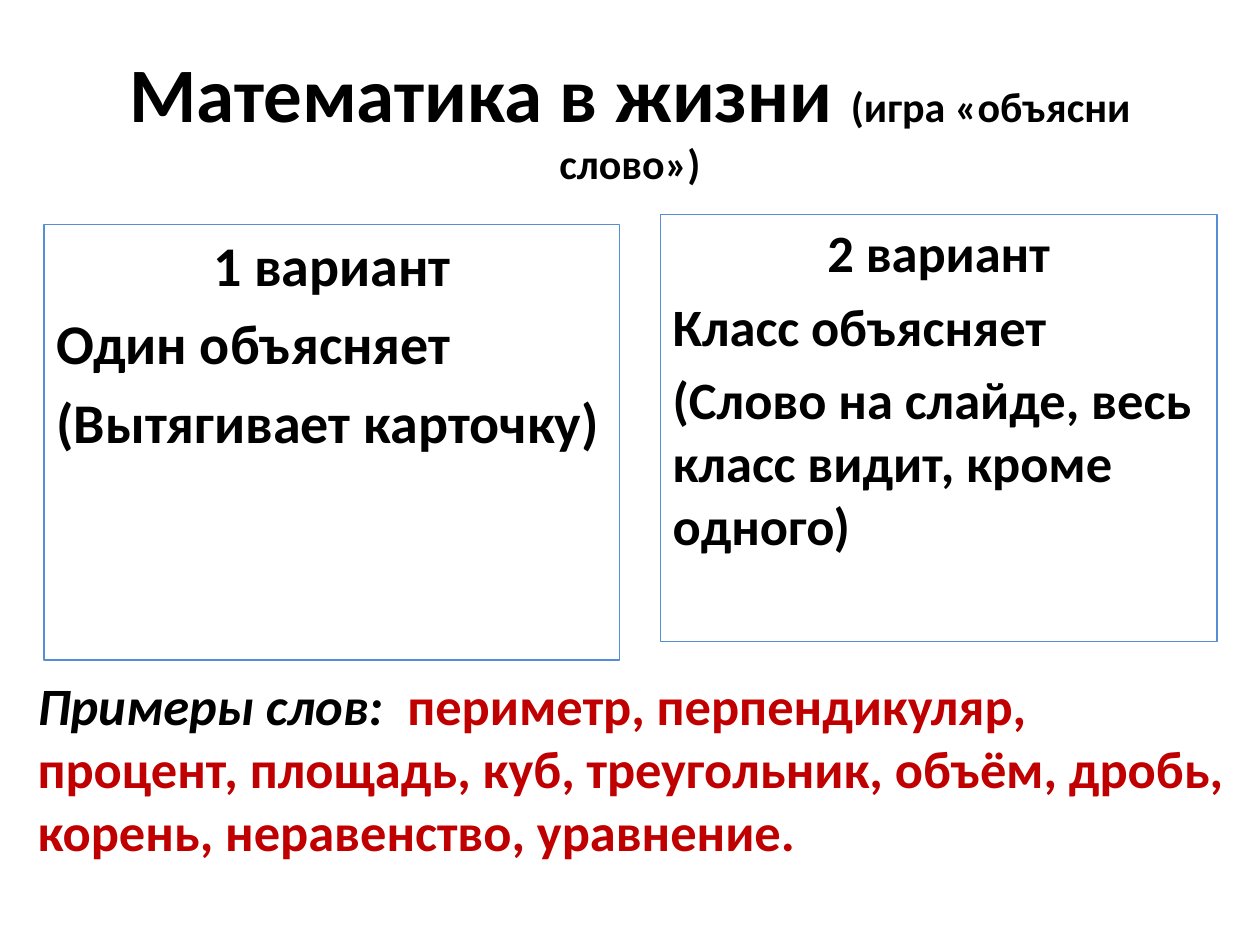
from pptx import Presentation
from pptx.dml.color import RGBColor
from pptx.enum.text import MSO_ANCHOR, PP_ALIGN
from pptx.util import Inches, Pt

COLORS = {"text": "000000", "words": "C00000", "border": "558ED5"}

prs = Presentation()
prs.slide_width, prs.slide_height = Inches(10), Inches(7.5)
s = prs.slides.add_slide(prs.slide_layouts[6])


def add_box(left, top, width, height):
    sp = s.shapes.add_textbox(Inches(left), Inches(top), Inches(width), Inches(height))
    sp.text_frame.word_wrap = True
    return sp


def add_run(p, text, size, color="text", italic=False):
    r = p.add_run()
    r.text = text
    r.font.name = "Calibri"
    r.font.size = Pt(size)
    r.font.bold = True
    r.font.italic = italic
    r.font.color.rgb = RGBColor.from_string(COLORS[color])


# Title
tf = add_box(0.5, 0.3, 9, 1.25).text_frame
tf.vertical_anchor = MSO_ANCHOR.MIDDLE
p = tf.paragraphs[0]
p.alignment = PP_ALIGN.CENTER
add_run(p, "Математика в жизни ", 44)
add_run(p, "(игра «объясни слово»)", 24)

# Two game variants in bordered boxes
variants = [
    ((0.35, 1.78, 4.57, 3.46), 32,
     ["1 вариант", "Один объясняет", "(Вытягивает карточку)"]),
    ((5.24, 1.7, 4.42, 3.39), 30,
     ["2 вариант", "Класс объясняет",
      "(Слово на слайде, весь класс видит, кроме одного)"]),
]
for position, size, lines in variants:
    sp = add_box(*position)
    sp.line.color.rgb = RGBColor.from_string(COLORS["border"])
    sp.line.width = Pt(0.75)
    tf = sp.text_frame
    for i, line in enumerate(lines):
        p = tf.add_paragraph() if i else tf.paragraphs[0]
        p.alignment = PP_ALIGN.LEFT if i else PP_ALIGN.CENTER
        if i:
            p.space_before = Pt(size * 0.2)
        add_run(p, line, size)

# Example words
p = add_box(0.2, 5.29, 9.8, 1.62).text_frame.paragraphs[0]
add_run(p, "Примеры слов:  ", 30, italic=True)
add_run(p, "периметр, перпендикуляр,  процент, площадь, куб, треугольник, "
           "объём, дробь, корень, неравенство, уравнение.", 30, "words")

prs.save("out.pptx")
